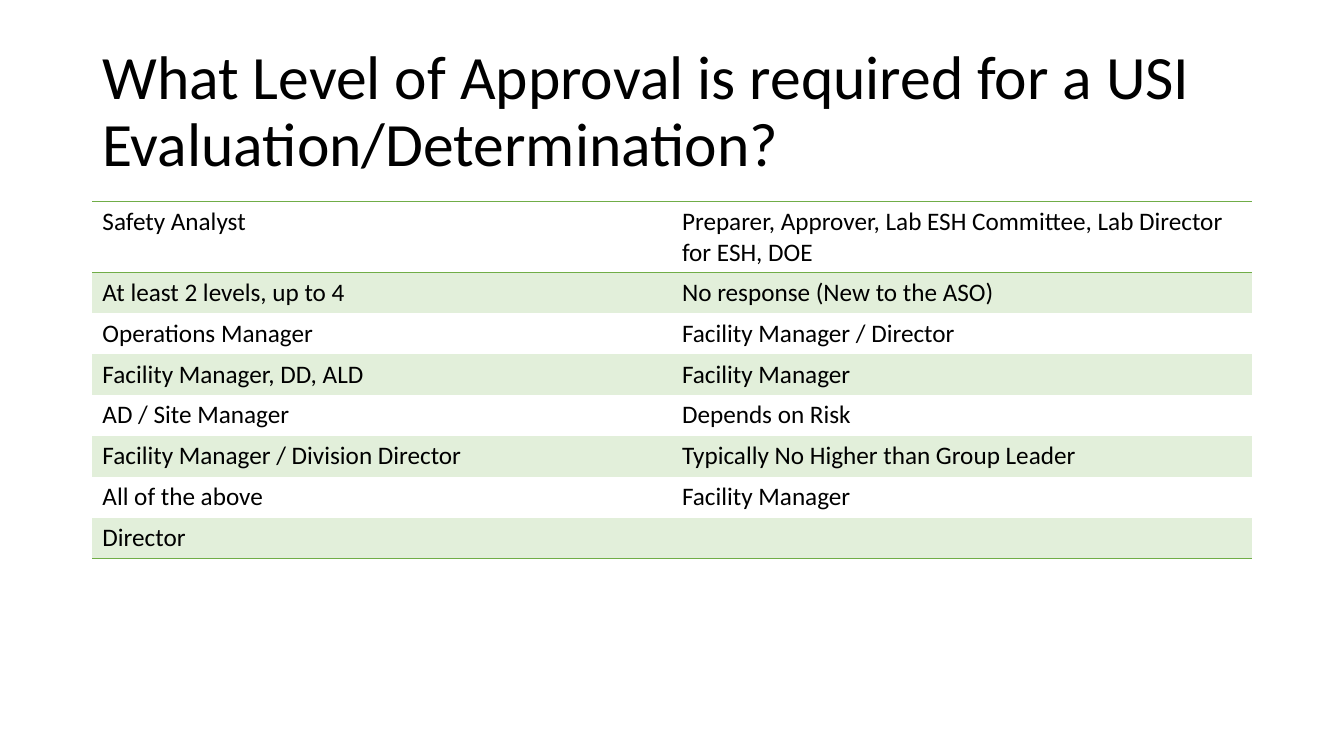
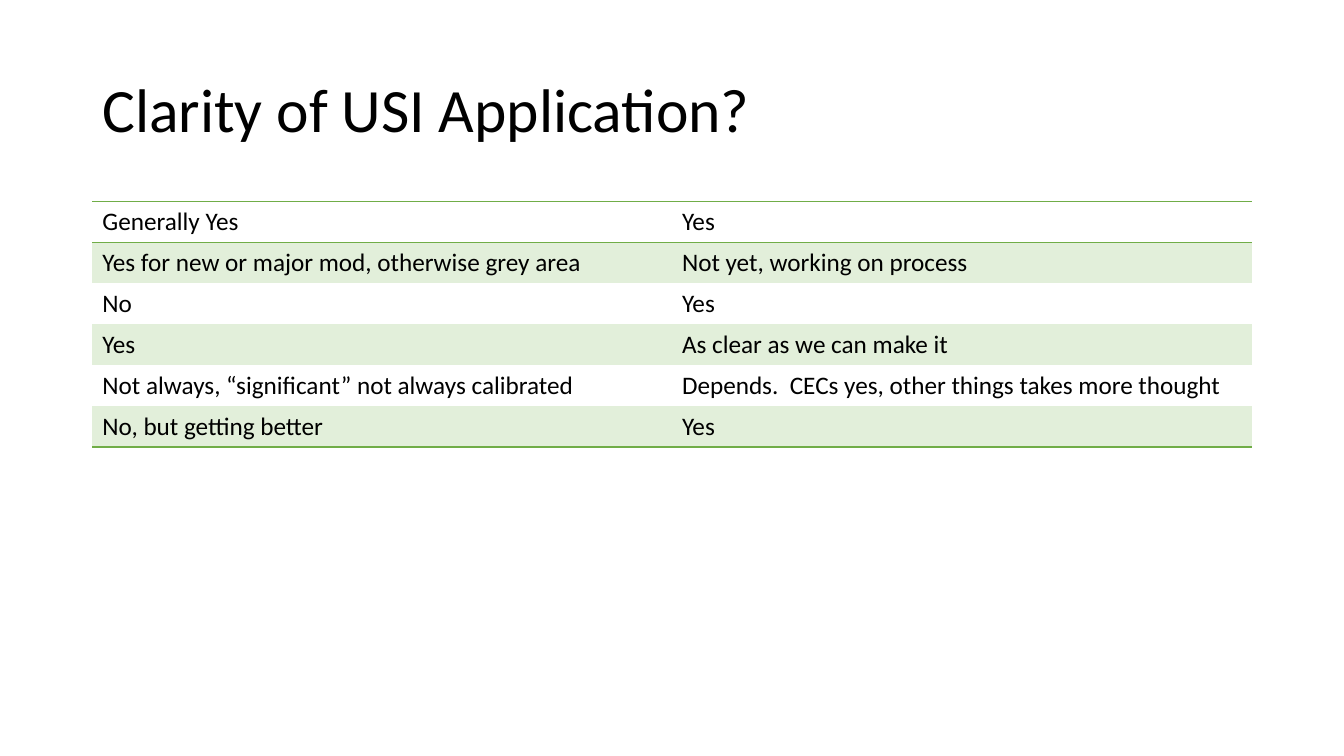
import pptx
import pptx.dml.color
import pptx.enum.text
import pptx.oxml
import pptx.oxml.ns
import pptx.util

PX = 9525
FONT = "Calibri"
COLORS = {"text": "000000", "rule": "70AD47", "band": "E2EFDA"}
NO_GRID_STYLE = "{2D5ABB26-0587-4C30-8999-92F81FD0307C}"

SLIDE_SIZE = (1280, 720)
TITLE_BOX = (88, 38, 1104, 139)
TABLE_BOX = (88, 192, 1104)
ROW_HEIGHT = 39

SLIDES = [
    (
        "What Level of Approval is required for a USI Evaluation/Determination?",
        [
            ("Safety Analyst", "Preparer, Approver, Lab ESH Committee, Lab Director for ESH, DOE"),
            ("At least 2 levels, up to 4", "No response (New to the ASO)"),
            ("Operations Manager", "Facility Manager / Director"),
            ("Facility Manager, DD, ALD", "Facility Manager"),
            ("AD / Site Manager", "Depends on Risk"),
            ("Facility Manager / Division Director", "Typically No Higher than Group Leader"),
            ("All of the above", "Facility Manager"),
            ("Director", ""),
        ],
    ),
    (
        "Clarity of USI Application?",
        [
            ("Generally Yes", "Yes"),
            ("Yes for new or major mod, otherwise grey area", "Not yet, working on process"),
            ("No", "Yes"),
            ("Yes", "As clear as we can make it"),
            ("Not always, “significant” not always calibrated",
             "Depends.  CECs yes, other things takes more thought"),
            ("No, but getting better", "Yes"),
        ],
    ),
]


def px(*lengths):
    return [pptx.util.Emu(length * PX) for length in lengths]


def color(name):
    return pptx.dml.color.RGBColor.from_string(COLORS[name])


def style_text(paragraph, size):
    paragraph.font.name = FONT
    paragraph.font.size = pptx.util.Pt(size)
    paragraph.font.color.rgb = color("text")


def add_title(slide, box, text):
    frame = slide.shapes.add_textbox(*px(*box)).text_frame
    frame.word_wrap = True
    frame.vertical_anchor = pptx.enum.text.MSO_ANCHOR.MIDDLE
    paragraph = frame.paragraphs[0]
    paragraph.text = text
    paragraph.line_spacing = 0.9
    style_text(paragraph, 44)


def add_border(cell, side):
    cell._tc.get_or_add_tcPr().append(pptx.oxml.parse_xml(
        f'<a:ln{side} {pptx.oxml.ns.nsdecls("a")} w="12700"><a:solidFill>'
        f'<a:srgbClr val="{COLORS["rule"]}"/></a:solidFill></a:ln{side}>'))


def add_answer_table(slide, box, answers):
    left, top, width = box
    frame = slide.shapes.add_table(
        len(answers), len(answers[0]), *px(left, top, width, ROW_HEIGHT * len(answers)))
    table = frame.table
    table.first_row = table.horz_banding = False
    table._tbl.tblPr.find(pptx.oxml.ns.qn("a:tableStyleId")).text = NO_GRID_STYLE
    last = len(answers) - 1
    for row, texts in enumerate(answers):
        for column, text in enumerate(texts):
            cell = table.cell(row, column)
            cell.text = text
            style_text(cell.text_frame.paragraphs[0], 18)
            if row == 0:
                add_border(cell, "T")
            if row in (0, last):
                add_border(cell, "B")
            if row % 2:
                cell.fill.solid()
                cell.fill.fore_color.rgb = color("band")
            else:
                cell.fill.background()


def add_answer_slide(presentation, title, answers):
    slide = presentation.slides.add_slide(presentation.slide_layouts[6])
    add_title(slide, TITLE_BOX, title)
    add_answer_table(slide, TABLE_BOX, answers)


def main():
    presentation = pptx.Presentation()
    presentation.slide_width, presentation.slide_height = px(*SLIDE_SIZE)
    for title, answers in SLIDES:
        add_answer_slide(presentation, title, answers)
    presentation.save("out.pptx")


if __name__ == "__main__":
    main()
